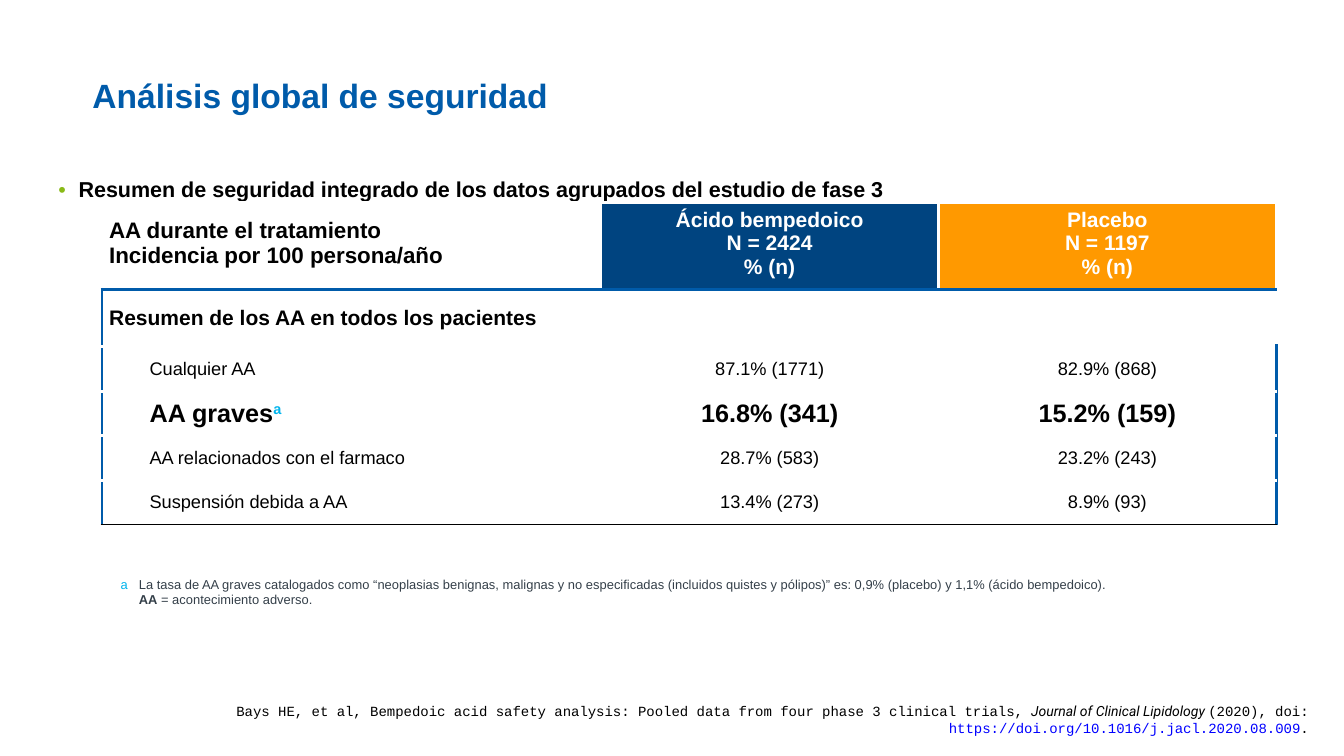
from lxml.etree import SubElement
from pptx import Presentation
from pptx.dml.color import RGBColor
from pptx.enum.text import MSO_ANCHOR as Anchor, MSO_AUTO_SIZE as AutoSize, PP_ALIGN as Align
from pptx.oxml.ns import qn
from pptx.util import Cm, Pt

# Content
TITLE = "Análisis global de seguridad"
SUMMARY = "Resumen de seguridad integrado de los datos agrupados del estudio de fase 3"
HEADERS = ["AA durante el tratamiento\nIncidencia por 100 persona/año",
           "Ácido bempedoico\nN = 2424\n% (n)",
           "Placebo\nN = 1197\n% (n)"]
SECTION = "Resumen de los AA en todos los pacientes"
EVENTS = [("Cualquier AA", "87.1% (1771)", "82.9% (868)"),
          ("AA graves", "16.8% (341)", "15.2% (159)"),
          ("AA relacionados con el farmaco", "28.7% (583)", "23.2% (243)"),
          ("Suspensión debida a AA", "13.4% (273)", "8.9% (93)")]
SERIOUS = "AA graves"
FOOTNOTE = [
    [("a\t", {"color": "cyan"}),
     ("La tasa de AA graves catalogados como “neoplasias benignas, malignas y no especificadas "
      "(incluidos quistes y pólipos)” es: 0,9% (placebo) y 1,1% (ácido bempedoico).", {})],
    [("AA", {"bold": True}), (" = acontecimiento adverso.", {})],
]
CITATION = [[
    ("Bays HE, et al, Bempedoic acid safety analysis: Pooled data from four phase 3 "
     "clinical trials, ", {}),
    ("Journal of Clinical Lipidology ", {"name": "Roboto", "italic": True}),
    ("(2020), doi: ", {}),
    ("https://doi.org/10.1016/j.jacl.2020.08.009", {"color": "link"}),
    (".", {}),
]]

COLORS = {"blue": "005BAA", "navy": "004480", "orange": "FF9900", "green": "89BA17",
          "cyan": "00B4ED", "slate": "343F49", "link": "0000FF",
          "black": "000000", "white": "FFFFFF"}
HEADER_FILLS = [None, "navy", "orange"]
COLUMN_WIDTHS = [12.57, 8.51, 8.51]
ROW_HEIGHTS = [2.18, 1.45] + [1.12] * len(EVENTS)


def rgb(color):
    return RGBColor.from_string(COLORS[color])


def style(run, size, color="black", bold=False, italic=False, name="Arial"):
    font = run.font
    font.size, font.bold, font.italic, font.name = Pt(size), bold, italic, name
    font.color.rgb = rgb(color)


def place(shape, left, top, width, height):
    shape.left, shape.top, shape.width, shape.height = map(Cm, (left, top, width, height))


def fill_placeholder(holder, text, box, size, color):
    place(holder, *box)
    frame = holder.text_frame
    frame.text = text
    frame.auto_size = AutoSize.NONE
    frame.margin_left = frame.margin_right = frame.margin_top = frame.margin_bottom = Cm(0.2)
    line = frame.paragraphs[0]
    line.alignment, line.line_spacing, line.space_before = Align.LEFT, 0.9, Pt(0)
    style(line.runs[0], size, color, bold=True)
    return frame


def add_note(slide, paragraphs, box, **defaults):
    frame = slide.shapes.add_textbox(*map(Cm, box)).text_frame
    frame.word_wrap = True
    for index, pieces in enumerate(paragraphs):
        line = frame.paragraphs[0] if index == 0 else frame.add_paragraph()
        for text, changes in pieces:
            run = line.add_run()
            run.text = text
            style(run, **{**defaults, **changes})
    return frame


def set_indent(paragraph, margin, first=0):
    properties = paragraph._p.get_or_add_pPr()
    properties.set("marL", str(Cm(margin)))
    properties.set("indent", str(Cm(first)))
    return properties


def draw_border(cell, side, color, width=2.25):
    line = SubElement(cell._tc.get_or_add_tcPr(), qn(f"a:ln{side}"), w=str(Pt(width)))
    SubElement(SubElement(line, qn("a:solidFill")), qn("a:srgbClr"), val=COLORS[color])


def frame_cell(cell, row, column):
    body, last = row > 0, len(ROW_HEIGHTS) - 1
    draw_border(cell, "L", "blue" if body and column == 0 else "white")
    draw_border(cell, "R", "blue" if body and column == 2 else "white")
    draw_border(cell, "T", "blue" if row == 1 else "white", 4.5 if row == 2 and column else 2.25)
    if row == last:
        draw_border(cell, "B", "black", 1)
    else:
        draw_border(cell, "B", "white" if body else "blue")


def write_cell(cell, text, size, color, bold, centered):
    cell.text_frame.text = text
    for line in cell.text_frame.paragraphs:
        line.alignment = Align.CENTER if centered else Align.LEFT
        for run in line.runs:
            style(run, size, color, bold)


def add_safety_table(slide):
    rows = [HEADERS, (SECTION, "", "")] + EVENTS
    table = slide.shapes.add_table(len(rows), 3, Cm(2.57), Cm(5.11),
                                   Cm(sum(COLUMN_WIDTHS)), Cm(sum(ROW_HEIGHTS))).table
    table.first_row = table.horz_banding = False
    for column, width in zip(table.columns, COLUMN_WIDTHS):
        column.width = Cm(width)
    for row, height in zip(table.rows, ROW_HEIGHTS):
        row.height = Cm(height)

    for r, texts in enumerate(rows):
        for c, text in enumerate(texts):
            cell = table.cell(r, c)
            cell.vertical_anchor = Anchor.MIDDLE
            cell.margin_left = cell.margin_right = Cm(0.18)
            cell.margin_top, cell.margin_bottom = 0, Cm(0 if r else 0.13)
            frame_cell(cell, r, c)
            fill = "white" if r else HEADER_FILLS[c]
            if fill:
                cell.fill.solid()
                cell.fill.fore_color.rgb = rgb(fill)
            else:
                cell.fill.background()

            serious = texts[0] == SERIOUS
            if r == 0:
                size, color = (15, "white") if c else (16, "black")
            else:
                size, color = 15 if r == 1 else 18 if serious else 13, "black"
            write_cell(cell, text, size, color, r < 2 or serious, c > 0)
            if r > 1 and c == 0:
                label = cell.text_frame.paragraphs[0]
                set_indent(label, 1.02)
                if serious:
                    mark = label.add_run()
                    mark.text = "a"
                    style(mark, size, "cyan", bold=True)
                    mark._r.get_or_add_rPr().set("baseline", "30000")
    table.cell(1, 0).merge(table.cell(1, 2))


def main():
    deck = Presentation()
    deck.slide_width, deck.slide_height = Cm(33.87), Cm(19.05)
    slide = deck.slides.add_slide(deck.slide_layouts[1])

    # Title and summary bullet
    title = fill_placeholder(slide.shapes.title, TITLE, (2.13, 1.57, 31.01, 1.55), 24, "blue")
    title.vertical_anchor = Anchor.BOTTOM
    summary = fill_placeholder(slide.placeholders[1], SUMMARY, (1.27, 4.32, 31.32, 4.24),
                               15.4, "black")
    summary.paragraphs[0].space_after = Pt(6)
    bullet = set_indent(summary.paragraphs[0], 0.51, -0.51)
    SubElement(SubElement(bullet, qn("a:buClr")), qn("a:srgbClr"), val=COLORS["green"])
    SubElement(bullet, qn("a:buFont"), typeface="Arial")
    SubElement(bullet, qn("a:buChar"), char="•")

    # Safety results
    add_safety_table(slide)

    # Footnote and citation
    footnote = add_note(slide, FOOTNOTE, (2.79, 14.4, 26.44, 1.17), size=9.2, color="slate")
    for line, first in zip(footnote.paragraphs, (-0.46, 0)):
        set_indent(line, 0.46, first)
    citation = add_note(slide, CITATION, (0.64, 17.58, 32.59, 0.69), size=10, name="Courier New")
    citation.paragraphs[0].alignment = Align.RIGHT

    deck.save("out.pptx")


if __name__ == "__main__":
    main()
